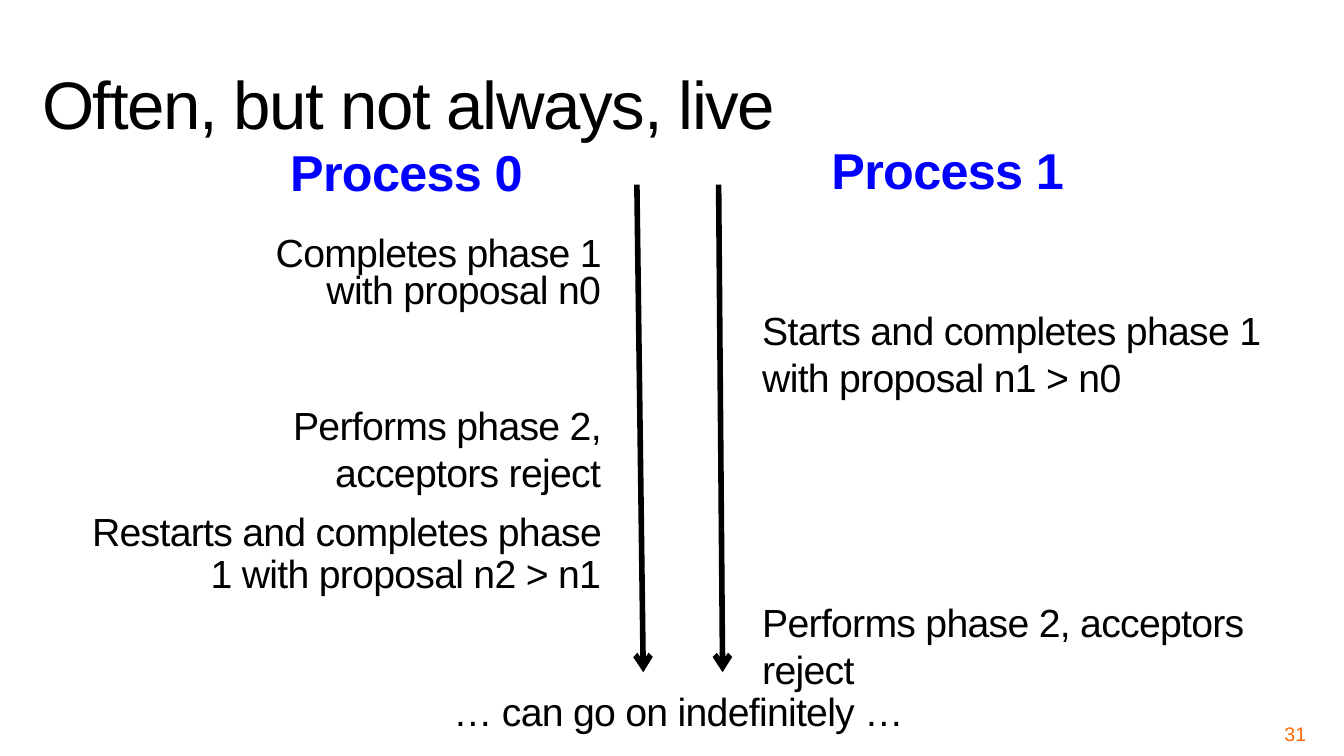
from lxml.etree import SubElement
from pptx import Presentation
from pptx.dml.color import RGBColor
from pptx.enum.shapes import MSO_CONNECTOR
from pptx.enum.text import MSO_ANCHOR as Anchor, PP_ALIGN as Align
from pptx.oxml.ns import qn
from pptx.util import Cm, Pt

COLORS = {"text": "000000", "process": "0000FF", "number": "FF6600", "page": "FFFFFF"}
FONT = "Arial"
LEFT_EDGE = 15.27   # right side of every Process 0 step
RIGHT_EDGE = 19.08  # left side of everything about Process 1

TITLE = "Often, but not always, live"
ENDING = "… can go on indefinitely …"
PAGE = "31"
# name, left, top
PROCESSES = [("Process 0", 5.44, 3.43), ("Process 1", RIGHT_EDGE, 3.38)]
# text, top, width, height, line spacing
STEPS_0 = [
    ("Completes phase 1 with proposal n0", 5.84, 9.6, 4.47, 0.8),
    ("Performs phase 2, acceptors reject", 9.98, 10.06, 3.15, 1),
    ("Restarts and completes phase 1 with proposal n2 > n1", 12.78, 13.39, 3.48, 0.9),
]
STEPS_1 = [
    ("Starts and completes phase 1 with proposal n1 > n0", 7.59, 13.41, 4.39, 1),
    ("Performs phase 2, acceptors reject", 14.94, 14.3, 3.2, 1),
]
# x at the top, x at the bottom
TIMELINES = [(16.05, 16.21), (18.11, 18.21)]
TIME_TOP, TIME_BOTTOM = 4.65, 16.94


def add_text(slide, text, box, size=28, align=Align.LEFT, color="text", bold=False,
             line=1, tracking=-0.5, anchor=Anchor.TOP, inset=0.13):
    """Add a one-paragraph text box; box and inset in cm, tracking in points."""
    tf = slide.shapes.add_textbox(*map(Cm, box)).text_frame
    tf.word_wrap = True
    tf.vertical_anchor = anchor
    tf.margin_left = tf.margin_right = tf.margin_top = tf.margin_bottom = Cm(inset)
    p = tf.paragraphs[0]
    p.alignment = align
    p.line_spacing = line
    p.font.name, p.font.size, p.font.bold = FONT, Pt(size), bold
    p.font.color.rgb = RGBColor.from_string(COLORS[color])
    r = p.add_run()
    r.text = text
    if tracking:
        r.font._element.set("spc", str(int(tracking * 100)))


def add_timeline(slide, x_top, x_bottom):
    c = slide.shapes.add_connector(MSO_CONNECTOR.STRAIGHT, Cm(x_top), Cm(TIME_TOP),
                                   Cm(x_bottom), Cm(TIME_BOTTOM))
    c.line.width = Pt(4)
    c.line.color.rgb = RGBColor.from_string(COLORS["text"])
    SubElement(c.line._get_or_add_ln(), qn("a:tailEnd"), type="arrow")
    SubElement(c._element.spPr, qn("a:effectLst"))


def main():
    prs = Presentation()
    prs.slide_width, prs.slide_height = Cm(33.87), Cm(19.05)
    s = prs.slides.add_slide(prs.slide_layouts[6])
    s.background.fill.solid()
    s.background.fill.fore_color.rgb = RGBColor.from_string(COLORS["page"])

    add_text(s, TITLE, (0.81, -0.13, 32.56, 3.96), size=48, line=0.8, tracking=-1,
             anchor=Anchor.BOTTOM, inset=0.25)
    for x_top, x_bottom in TIMELINES:
        add_timeline(s, x_top, x_bottom)
    for name, left, top in PROCESSES:
        add_text(s, name, (left, top, 9.6, 2.18), size=36, align=Align.CENTER,
                 color="process", bold=True)
    for text, top, width, height, line in STEPS_0:
        add_text(s, text, (LEFT_EDGE - width, top, width, height), align=Align.RIGHT,
                 line=line)
    for text, top, width, height, line in STEPS_1:
        add_text(s, text, (RIGHT_EDGE, top, width, height), line=line)
    add_text(s, ENDING, (9.83, 17.2, 14.53, 1.52), align=Align.CENTER)
    add_text(s, PAGE, (25.12, 18.21, 7.9, 0.58), size=14, align=Align.RIGHT,
             color="number", tracking=0, anchor=Anchor.MIDDLE, inset=0.1)
    prs.save("out.pptx")


if __name__ == "__main__":
    main()
